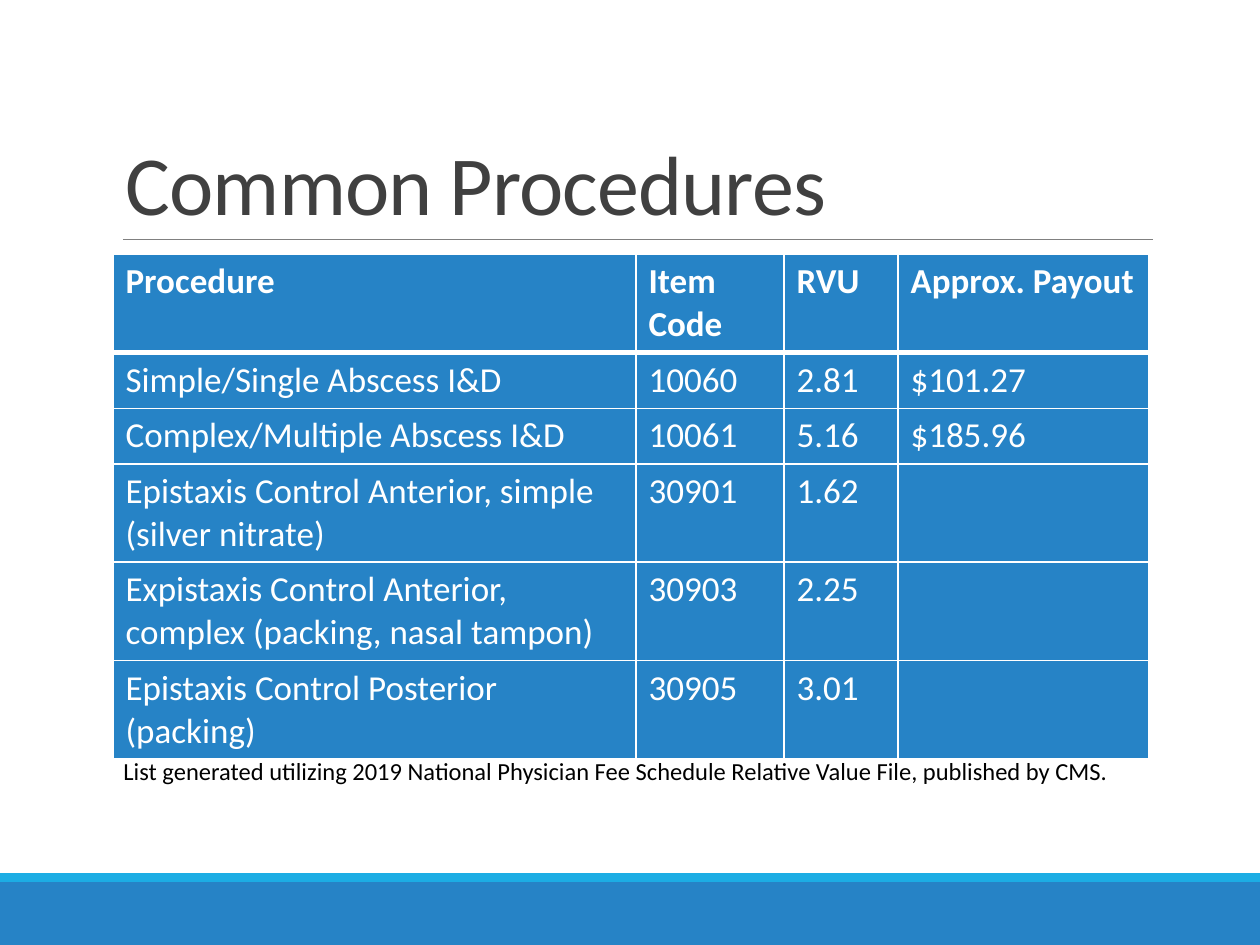
"""Build the Common Procedures slide with its table of codes and payouts."""
import pptx
import pptx.dml.color
import pptx.enum.shapes
import pptx.enum.text
import pptx.oxml
import pptx.oxml.ns
import pptx.util

TITLE = "Common Procedures"
NOTE = ("List generated utilizing 2019 National Physician Fee Schedule "
        "Relative Value File, published by CMS.")
ROWS = [
    ("Procedure", "Item Code", "RVU", "Approx. Payout"),
    ("Simple/Single Abscess I&D", "10060", "2.81", "$101.27"),
    ("Complex/Multiple Abscess I&D", "10061", "5.16", "$185.96"),
    ("Epistaxis Control Anterior, simple\n(silver nitrate)", "30901", "1.62", ""),
    ("Expistaxis Control Anterior, complex (packing, nasal tampon)", "30903", "2.25", ""),
    ("Epistaxis Control Posterior (packing)", "30905", "3.01", ""),
]
COLUMN_WIDTHS = [523, 148, 114, 251]
ROW_HEIGHTS = [98, 56, 55, 98, 98, 98]
BANDS = [("blue", 882, 63), ("cyan", 873, 9)]
COLORS = {"blue": "2683C6", "cyan": "1CADE4", "rule": "808080",
          "title": "404040", "white": "FFFFFF", "black": "000000"}
FONT = "Calibri"
WIDTH, HEIGHT = 1260, 945
EMU_PER_PX = 914400 / 126


def px(*lengths):
    return [pptx.util.Emu(round(length * EMU_PER_PX)) for length in lengths]


def color(name):
    return pptx.dml.color.RGBColor.from_string(COLORS[name])


def style(paragraph, size, color_name, bold=False):
    font = paragraph.font
    font.name, font.size, font.bold = FONT, pptx.util.Pt(size), bold
    font.color.rgb = color(color_name)


def add_borders(cell, bottom, top):
    for side, points in (("L", 1), ("R", 1), ("T", top), ("B", bottom)):
        cell._tc.get_or_add_tcPr().append(pptx.oxml.parse_xml(
            f'<a:ln{side} {pptx.oxml.ns.nsdecls("a")} w="{points * 12700}"><a:solidFill>'
            f'<a:srgbClr val="{COLORS["white"]}"/></a:solidFill></a:ln{side}>'))


def add_bands(slide):
    for name, top, height in BANDS:
        band = slide.shapes.add_shape(
            pptx.enum.shapes.MSO_SHAPE.RECTANGLE, *px(0, top, WIDTH, height))
        band.shadow.inherit = False
        band.fill.solid()
        band.fill.fore_color.rgb = color(name)
        band.line.fill.background()


def add_rule(slide):
    rule = slide.shapes.add_connector(
        pptx.enum.shapes.MSO_CONNECTOR.STRAIGHT, *px(123, 239, 1153, 239))
    rule.line.color.rgb = color("rule")
    rule.line.width = pptx.util.Pt(0.5)
    rule._element.spPr.append(
        pptx.oxml.parse_xml(f'<a:effectLst {pptx.oxml.ns.nsdecls("a")}/>'))


def add_title(slide):
    title = slide.shapes.title
    title.left, title.top, title.width, title.height = px(113, 39, 1040, 200)
    title.text_frame.text = TITLE
    title.text_frame.vertical_anchor = pptx.enum.text.MSO_ANCHOR.BOTTOM
    paragraph = title.text_frame.paragraphs[0]
    paragraph.alignment = pptx.enum.text.PP_ALIGN.LEFT
    paragraph.line_spacing = 0.85
    style(paragraph, 48, "title")
    paragraph.runs[0]._r.get_or_add_rPr().set("spc", "-50")


def add_procedures(slide):
    table = slide.shapes.add_table(
        len(ROWS), len(COLUMN_WIDTHS),
        *px(113, 254, sum(COLUMN_WIDTHS), sum(ROW_HEIGHTS))).table
    table.horz_banding = False
    for column, width in zip(table.columns, px(*COLUMN_WIDTHS)):
        column.width = width
    for row, height in zip(table.rows, px(*ROW_HEIGHTS)):
        row.height = height
    for row_index, texts in enumerate(ROWS):
        for column_index, text in enumerate(texts):
            cell = table.cell(row_index, column_index)
            cell.text = text
            add_borders(cell, bottom=3 if row_index == 0 else 1,
                        top=3 if row_index == 1 else 1)
            cell.fill.solid()
            cell.fill.fore_color.rgb = color("blue")
            for paragraph in cell.text_frame.paragraphs:
                style(paragraph, 20, "white", bold=row_index == 0)


def add_note(slide):
    frame = slide.shapes.add_textbox(*px(111, 750, 1040, 43)).text_frame
    frame.word_wrap = True
    frame.text = NOTE
    style(frame.paragraphs[0], 14, "black")


def main():
    presentation = pptx.Presentation()
    presentation.slide_width, presentation.slide_height = px(WIDTH, HEIGHT)
    slide = presentation.slides.add_slide(presentation.slide_layouts[5])
    add_bands(slide)
    add_rule(slide)
    add_title(slide)
    add_procedures(slide)
    add_note(slide)
    presentation.save("out.pptx")


if __name__ == "__main__":
    main()
